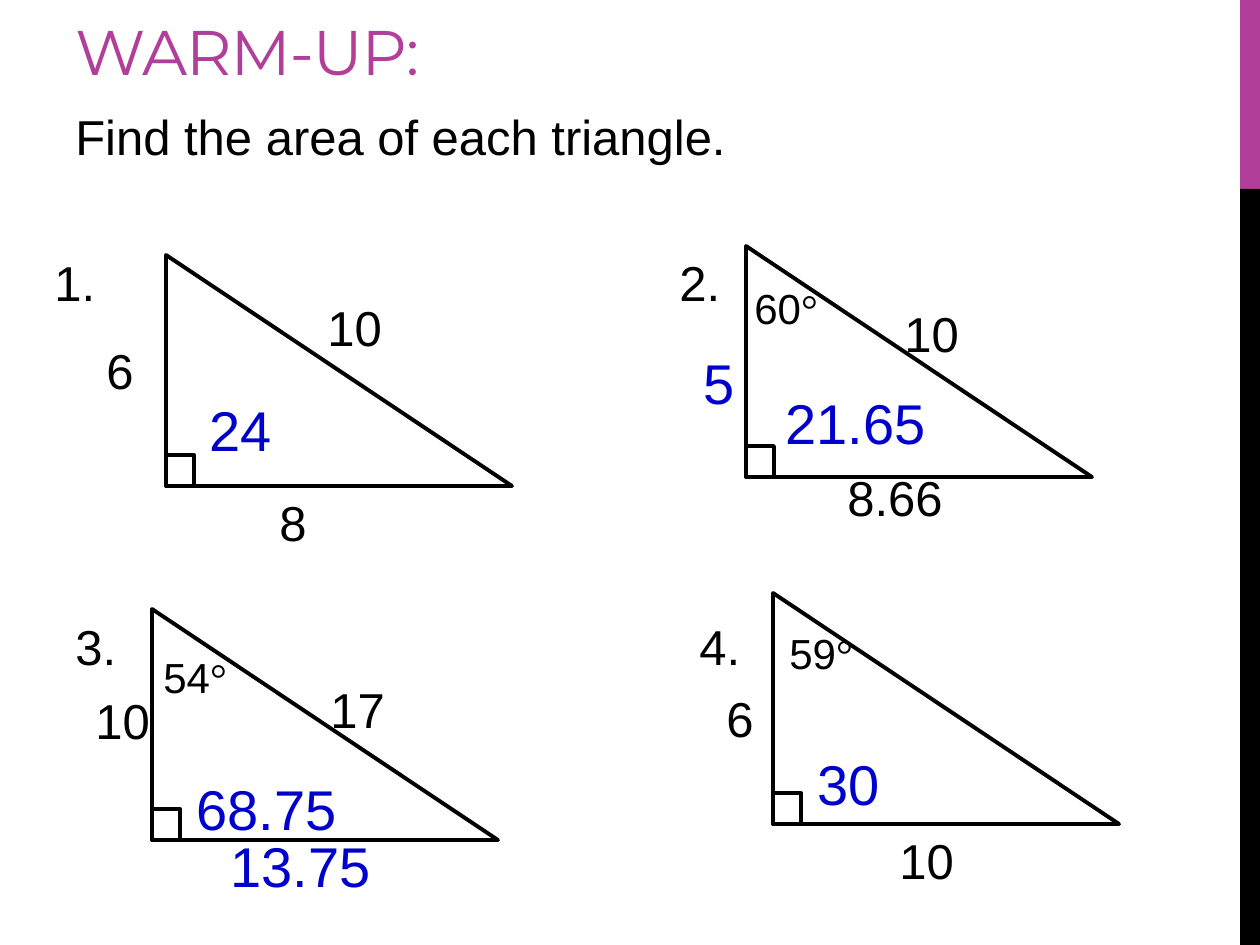
from pptx import Presentation
from pptx.dml.color import RGBColor
from pptx.enum.shapes import MSO_SHAPE
from pptx.enum.text import MSO_ANCHOR, MSO_AUTO_SIZE
from pptx.util import Emu, Pt

BLACK = RGBColor(0x00, 0x00, 0x00)
BLUE = RGBColor(0x00, 0x00, 0xCC)
PLUM = RGBColor(0xB1, 0x3F, 0x9A)

SIDE = dict(width=117, height=72, size=28)
ANGLE = dict(width=117, height=63, size=24)
AREA = dict(width=315, height=81, size=32, color=BLUE)

TRIANGLES = [(166, 255), (746, 246), (152, 609), (773, 593)]
LABELS = [
    (SIDE, [("1.", 42, 246), ("2.", 667, 246), ("3.", 63, 610), ("4.", 687, 610),
            ("6", 94, 334), ("10", 315, 291), ("8", 267, 486),
            ("10", 892, 297),
            ("10", 83, 684), ("17", 318, 673),
            ("10", 887, 824), ("6", 714, 682)]),
    (SIDE | dict(width=169), [("8.66", 835, 461)]),
    (ANGLE, [("60°", 742, 276), ("54°", 151, 645), ("59°", 777, 621)]),
    (AREA, [("24", 197, 389), ("21.65", 773, 382), ("68.75", 184, 768),
            ("30", 805, 743), ("13.75", 218, 825)]),
    (AREA | dict(width=55), [("5", 691, 342)]),
]


def px(count):
    """Turn pixels into EMU."""
    return Emu(round(count * 914400 / 126))


class Board:
    """Hold the style and the current slide."""

    def __init__(self, deck):
        """Add a blank slide to the deck."""
        self.font = "Arial"
        self.line = Pt(2.25)
        self.slide = deck.slides.add_slide(deck.slide_layouts[6])

    def bar(self, left, top, width, height, color):
        """Draw a filled strip."""
        strip = self.slide.shapes.add_shape(
            MSO_SHAPE.RECTANGLE, px(left), px(top), px(width), px(height))
        strip.shadow.inherit = False
        strip.fill.solid()
        strip.fill.fore_color.rgb = color
        strip.line.fill.background()

    def triangle(self, left, top, width=346, height=231):
        """Draw a right triangle with its corner mark as one group."""
        group = self.slide.shapes.add_group_shape()
        mark = (28, 31)
        parts = [(MSO_SHAPE.RIGHT_TRIANGLE, top, width, height),
                 (MSO_SHAPE.RECTANGLE, top + height - mark[1], *mark)]
        for kind, y, wide, high in parts:
            shape = group.shapes.add_shape(kind, px(left), px(y), px(wide), px(high))
            shape.shadow.inherit = False
            shape.fill.background()
            shape.line.color.rgb = BLACK
            shape.line.width = self.line

    def text(self, words, left, top, width, height, size=28, color=BLACK,
             font=None, anchor=MSO_ANCHOR.TOP, space=0):
        """Place a line of text, with any degree sign in a serif font."""
        box = self.slide.shapes.add_textbox(px(left), px(top), px(width), px(height))
        frame = box.text_frame
        frame.word_wrap = True
        frame.auto_size = MSO_AUTO_SIZE.NONE
        frame.vertical_anchor = anchor
        head, sign, _ = words.partition("°")
        for piece, face in ((head, font or self.font), (sign, "Times New Roman")):
            if piece:
                run = frame.paragraphs[0].add_run()
                run.text = piece
                run.font.name = face
                run.font.size = Pt(size)
                run.font.color.rgb = color
                if space:
                    run.font._element.set("spc", str(space))


def main():
    """Build the slide and save it."""
    deck = Presentation()
    deck.slide_width, deck.slide_height = px(1260), px(945)
    board = Board(deck)
    board.bar(1240, 0, 20, 189, PLUM)
    board.bar(1240, 189, 20, 756, BLACK)
    board.text("WARM-UP:", 63, 0, 798, 94, size=36, color=PLUM,
               font="Montserrat", anchor=MSO_ANCHOR.BOTTOM, space=-60)
    board.text("Find the area of each triangle.", 63, 100, 1165, 72)
    for left, top in TRIANGLES:
        board.triangle(left, top)
    for style, items in LABELS:
        for words, left, top in items:
            board.text(words, left, top, **style)
    deck.save("out.pptx")


if __name__ == "__main__":
    main()
